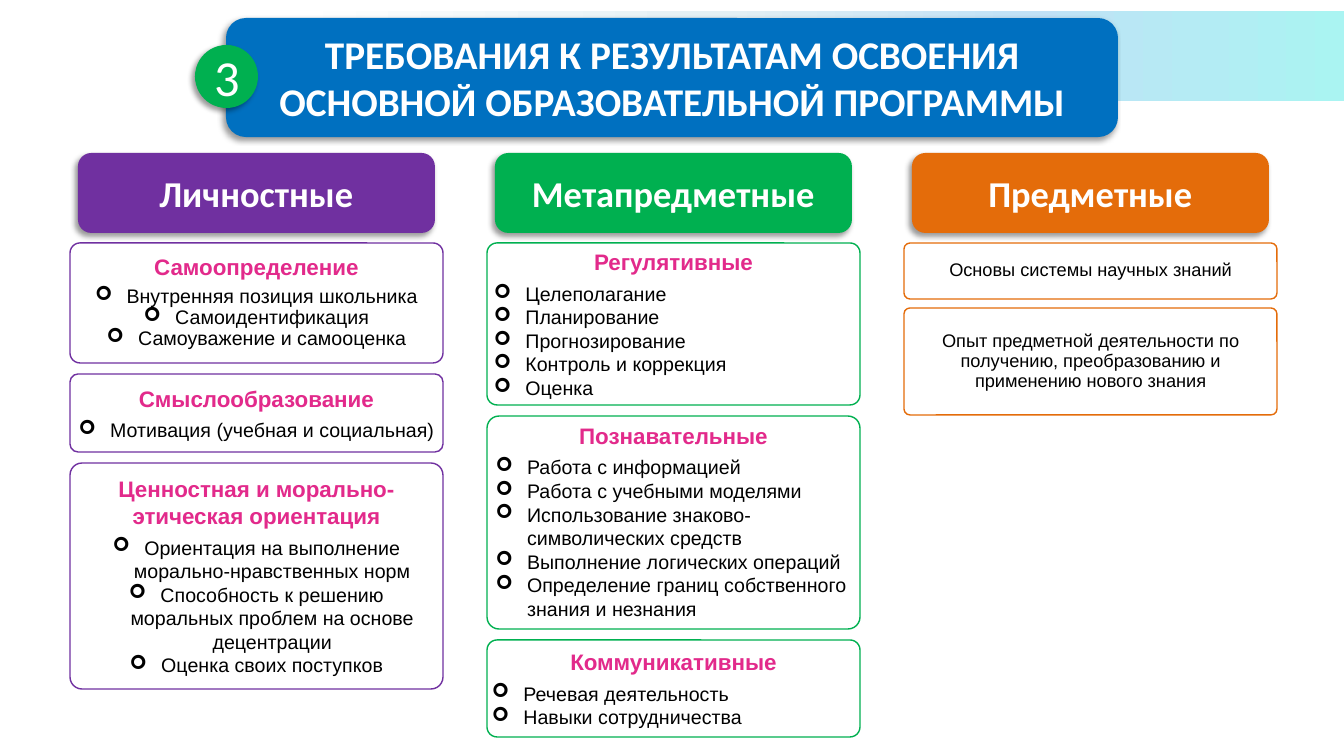
"""Build a slide on the required results of the core educational programme."""
from dataclasses import dataclass

from lxml.etree import SubElement
from pptx import Presentation
from pptx.dml.color import RGBColor
from pptx.enum.shapes import MSO_SHAPE as Shape
from pptx.enum.text import MSO_ANCHOR as Anchor, MSO_AUTO_SIZE as AutoSize, PP_ALIGN as Align
from pptx.oxml import parse_xml
from pptx.oxml.ns import nsdecls, qn
from pptx.util import Emu, Pt

EMU_PER_PX = 914400 / 100.8
BLUE, PURPLE, GREEN, ORANGE = "0070C0", "7030A0", "00B050", "E46C0A"
WHITE, BLACK, PINK = "FFFFFF", "000000", "E22A8B"
BAND_STOPS = [(0, WHITE), (40, "E4F0F4"), (70, "C0E1F6"), (100, "AAF4F2")]
COLUMN_LEFT, COLUMN_PITCH, CARD_WIDTH = 70, 417, 373
HEADER_TOP, CARDS_TOP = 153, 243


@dataclass
class Card:
    """One outlined card; without a heading its lines are plain text."""
    height: int
    radius: int
    pad: int
    heading: str
    lines: list
    align: Align = Align.LEFT
    heading_spacing: float = 1.0
    line_spacing: float = 1.0


@dataclass
class Column:
    """A coloured header with the cards below it."""
    title: str
    color: str
    gap: int
    cards: list


COLUMNS = [
    Column("Личностные", PURPLE, 11, [
        Card(120, 10, 5, "Самоопределение",
             ["Внутренняя позиция школьника", "Самоидентификация",
              "Самоуважение и самооценка"], Align.CENTER, 0.9, 0.9),
        Card(78, 8, 4, "Смыслообразование",
             ["Мотивация (учебная и социальная)"], Align.CENTER),
        Card(226, 12, 8, "Ценностная и морально-этическая ориентация",
             ["Ориентация на выполнение морально-нравственных норм",
              "Способность к решению моральных проблем на основе децентрации",
              "Оценка своих поступков"], Align.CENTER),
    ]),
    Column("Метапредметные", GREEN, 11, [
        Card(162, 10, 4, "Регулятивные",
             ["Целеполагание", "Планирование", "Прогнозирование",
              "Контроль и коррекция", "Оценка"]),
        Card(213, 12, 5, "Познавательные",
             ["Работа с информацией", "Работа с учебными моделями",
              "Использование знаково-символических средств",
              "Выполнение логических операций",
              "Определение границ собственного знания и незнания"],
             heading_spacing=0.9),
        Card(97, 10, 2, "Коммуникативные",
             ["Речевая деятельность", "Навыки сотрудничества"]),
    ]),
    Column("Предметные", ORANGE, 9, [
        Card(56, 6, 4, "", ["Основы системы научных знаний"],
             Align.CENTER, line_spacing=0.9),
        Card(107, 6, 6, "",
             ["Опыт предметной деятельности по получению, преобразованию "
              "и применению нового знания"], Align.CENTER, line_spacing=0.9),
    ]),
]


def px(length):
    """Turn pixels into EMU."""
    return Emu(round(length * EMU_PER_PX))


def rgb(color):
    """Turn a hex string into a colour."""
    return RGBColor.from_string(color)


def add_block(slide, kind, box, color):
    """Add a filled shape without outline or shadow."""
    block = slide.shapes.add_shape(kind, *map(px, box))
    block.shadow.inherit = False
    block.fill.solid()
    block.fill.fore_color.rgb = rgb(color)
    block.line.fill.background()
    return block


def add_raised_block(slide, kind, box, color):
    """Add a filled shape that casts a soft shadow."""
    block = add_block(slide, kind, box, color)
    effects = block.element.spPr.find(qn("a:effectLst"))
    shadow = SubElement(effects, qn("a:outerShdw"), blurRad=str(Pt(4)), dist=str(Pt(3)),
                        dir="8100000", algn="tr", rotWithShape="0")
    shade = SubElement(shadow, qn("a:srgbClr"), val=BLACK)
    SubElement(shade, qn("a:alpha"), val="40000")
    return block


def style(paragraph, font, size, color, bold=False, align=Align.CENTER):
    """Format a paragraph and its runs."""
    paragraph.alignment = align
    for run in paragraph.runs:
        run.font.name = font
        run.font.size = Pt(size)
        run.font.bold = bold
        run.font.color.rgb = rgb(color)


def write_label(shape, text, size, bold=True):
    """Centre one white line of text in a shape."""
    frame = shape.text_frame
    frame.text = text
    frame.word_wrap = True
    frame.vertical_anchor = Anchor.MIDDLE
    style(frame.paragraphs[0], "Calibri", size, WHITE, bold)


def add_bullet(paragraph):
    """Give a paragraph an arrow bullet with a hanging indent."""
    properties = paragraph._p.get_or_add_pPr()
    properties.set("marL", "285750")
    properties.set("indent", "-285750")
    SubElement(properties, qn("a:buFont"), typeface="Wingdings")
    SubElement(properties, qn("a:buChar"), char="➢")


def add_band(slide):
    """Add the gradient band behind the title."""
    band = add_block(slide, Shape.RECTANGLE, (291, 11, 1053, 90), WHITE)
    stops = "".join(f'<a:gs pos="{place * 1000}"><a:srgbClr val="{color}"/></a:gs>'
                    for place, color in BAND_STOPS)
    gradient = parse_xml(f'<a:gradFill {nsdecls("a")}><a:gsLst>{stops}</a:gsLst>'
                         '<a:lin ang="0" scaled="0"/></a:gradFill>')
    properties = band.element.spPr
    properties.replace(properties.find(qn("a:solidFill")), gradient)


def add_title(slide):
    """Add the title on its blue plate with the number badge."""
    plate_box = (226, 18, 892, 119)
    add_raised_block(slide, Shape.ROUNDED_RECTANGLE, plate_box, BLUE)
    title = slide.shapes.title
    title.left, title.top, title.width, title.height = map(px, plate_box)
    write_label(title, "ТРЕБОВАНИЯ К РЕЗУЛЬТАТАМ ОСВОЕНИЯ "
                       "ОСНОВНОЙ ОБРАЗОВАТЕЛЬНОЙ ПРОГРАММЫ", 28)
    title.text_frame.auto_size = AutoSize.NONE
    slide.shapes._spTree.append(title.element)
    badge = add_raised_block(slide, Shape.OVAL, (195, 45, 63, 63), GREEN)
    write_label(badge, "3", 36, bold=False)


def add_card(slide, card, left, top, color):
    """Add an outlined card with its heading and lines."""
    box = (left, top, CARD_WIDTH, card.height)
    outline = add_block(slide, Shape.ROUNDED_RECTANGLE, box, WHITE)
    outline.adjustments[0] = card.radius / card.height
    white = outline.element.spPr.find(f"{qn('a:solidFill')}/{qn('a:srgbClr')}")
    SubElement(white, qn("a:alpha"), val="90000")
    outline.line.color.rgb = rgb(color)
    outline.line.width = Pt(1)
    frame = outline.text_frame
    frame.word_wrap = True
    frame.vertical_anchor = Anchor.MIDDLE
    frame.margin_left = frame.margin_right = px(card.pad)
    frame.margin_top = frame.margin_bottom = px(2)
    frame.text = "\n".join([card.heading] * bool(card.heading) + card.lines)
    lines = list(frame.paragraphs)
    if card.heading:
        heading = lines.pop(0)
        style(heading, "Arial", 16, PINK, bold=True)
        heading.line_spacing = card.heading_spacing
        heading.space_after = Pt(4.5)
    for line in lines:
        if card.heading:
            add_bullet(line)
        style(line, "Arial", 14 if card.heading else 13, BLACK, align=card.align)
        line.line_spacing = card.line_spacing


def add_column(slide, column, left):
    """Add a column header and stack its cards."""
    header = add_raised_block(slide, Shape.ROUNDED_RECTANGLE,
                              (left + 8, HEADER_TOP, 357, 80), column.color)
    write_label(header, column.title, 26)
    top = CARDS_TOP
    for card in column.cards:
        add_card(slide, card, left, top, column.color)
        top += card.height + column.gap


def main():
    """Build and save the slide."""
    deck = Presentation()
    deck.slide_width, deck.slide_height = px(1344), px(756)
    slide = deck.slides.add_slide(deck.slide_layouts[5])
    add_band(slide)
    add_title(slide)
    for index, column in enumerate(COLUMNS):
        add_column(slide, column, COLUMN_LEFT + index * COLUMN_PITCH)
    deck.save("out.pptx")


if __name__ == "__main__":
    main()
